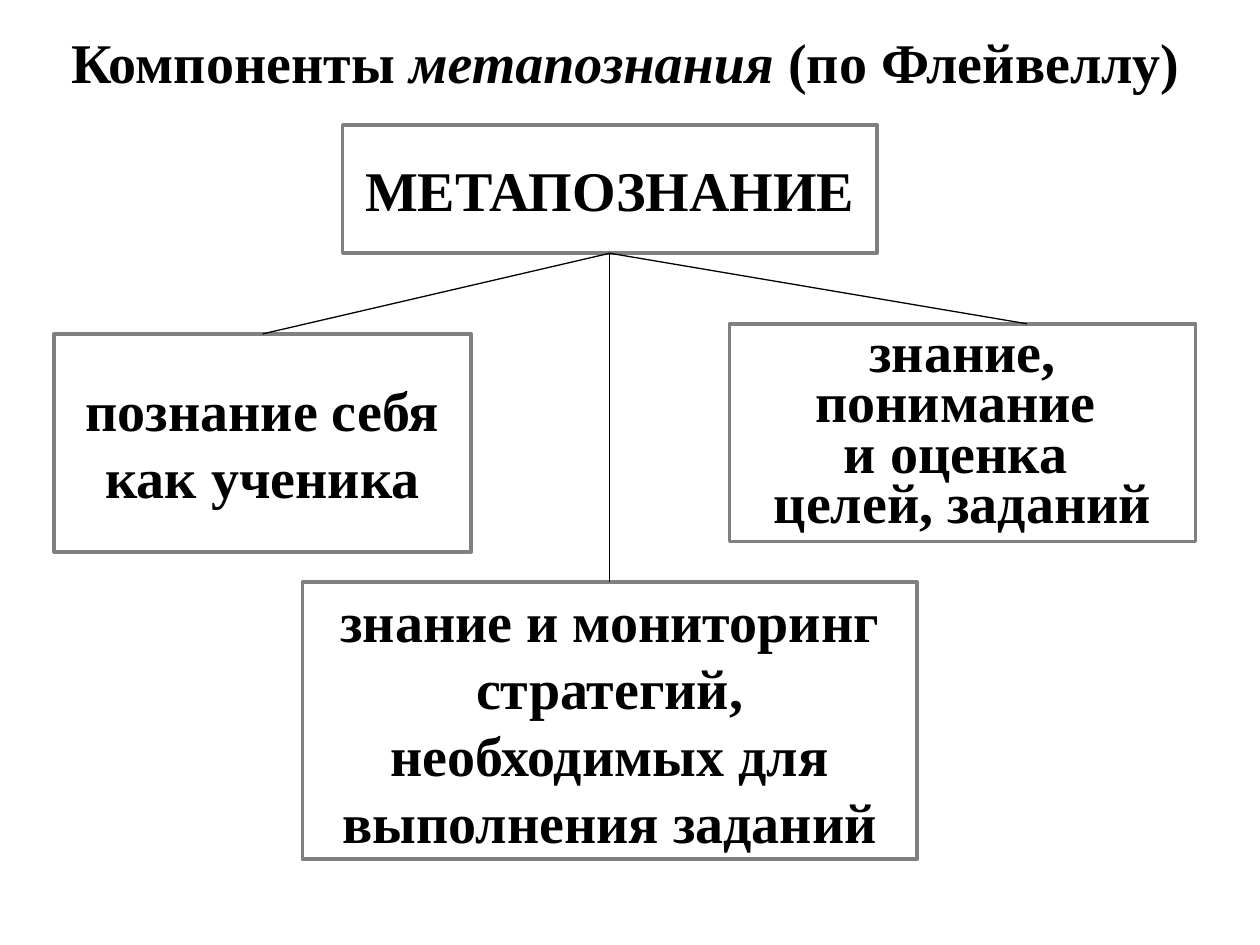
from pptx import Presentation
from pptx.dml.color import RGBColor
from pptx.enum.shapes import MSO_CONNECTOR, MSO_SHAPE
from pptx.enum.text import MSO_ANCHOR, PP_ALIGN
from pptx.oxml.ns import qn
from pptx.util import Inches, Pt
from lxml.etree import SubElement

COLORS = {"paper": "FFFFFF", "border": "808080", "ink": "000000"}
BOTTOM, TOP = 2, 0


class Board:
    font = "Times New Roman"
    size = Pt(32)

    def __init__(self, slide):
        self.slide = slide

    def color(self, name):
        return RGBColor.from_string(COLORS[name])

    def box(self, place, paras, border="border", spacing=None):
        """Draw a box; each paragraph is a list of (text, italic) runs."""
        shape = self.slide.shapes.add_shape(
            MSO_SHAPE.RECTANGLE, *[Inches(n) for n in place])
        shape.shadow.inherit = False
        shape.fill.solid()
        shape.fill.fore_color.rgb = self.color("paper")
        shape.line.color.rgb = self.color(border)
        shape.line.width = Pt(2)
        frame = shape.text_frame
        frame.word_wrap = True
        frame.vertical_anchor = MSO_ANCHOR.MIDDLE
        for i, runs in enumerate(paras):
            para = frame.add_paragraph() if i else frame.paragraphs[0]
            para.alignment = PP_ALIGN.CENTER
            if spacing:
                para.line_spacing = spacing
            for text, italic in runs:
                run = para.add_run()
                run.text = text
                font = run.font
                font.name, font.size = self.font, self.size
                font.bold, font.italic = True, italic
                font.color.rgb = self.color("ink")
        return shape

    def link(self, start, end, point=None):
        """Join bottom of start to top of end, or to a point on its top side."""
        x, y = [Inches(n) for n in point or (0, 0)]
        line = self.slide.shapes.add_connector(
            MSO_CONNECTOR.STRAIGHT, 0, 0, x, y)
        line.begin_connect(start, BOTTOM)
        if not point:
            line.end_connect(end, TOP)
        line.line.color.rgb = self.color("ink")
        line.line.width = Pt(0.75)
        SubElement(line._element.spPr, qn("a:effectLst"))


def main():
    deck = Presentation()
    deck.slide_width, deck.slide_height = Inches(10), Inches(7.5)
    board = Board(deck.slides.add_slide(deck.slide_layouts[6]))

    # Three components
    self_box = board.box((0.43, 2.65, 3.31, 1.73),
                         [[("познание себя как ученика", False)]])
    goals = ["знание, понимание ", "и оценка ", "целей, заданий"]
    goal_box = board.box((5.79, 2.57, 3.7, 1.73),
                         [[(text, False)] for text in goals], spacing=0.75)
    plan_box = board.box(
        (2.4, 4.62, 4.88, 2.2),
        [[("знание и мониторинг стратегий, необходимых для "
           "выполнения заданий", False)]])

    # Root concept and its branches
    root = board.box((2.72, 0.99, 4.24, 1.02), [[("МЕТАПОЗНАНИЕ", False)]])
    board.link(root, self_box)
    board.link(root, goal_box, (8.15, 2.57))
    board.link(root, plan_box)

    # Title
    board.box((0.28, 0.13, 9.37, 0.71),
              [[("Компоненты ", False), ("метапознания ", True),
                ("(по Флейвеллу)", False)]], border="paper")
    deck.save("out.pptx")


if __name__ == "__main__":
    main()
